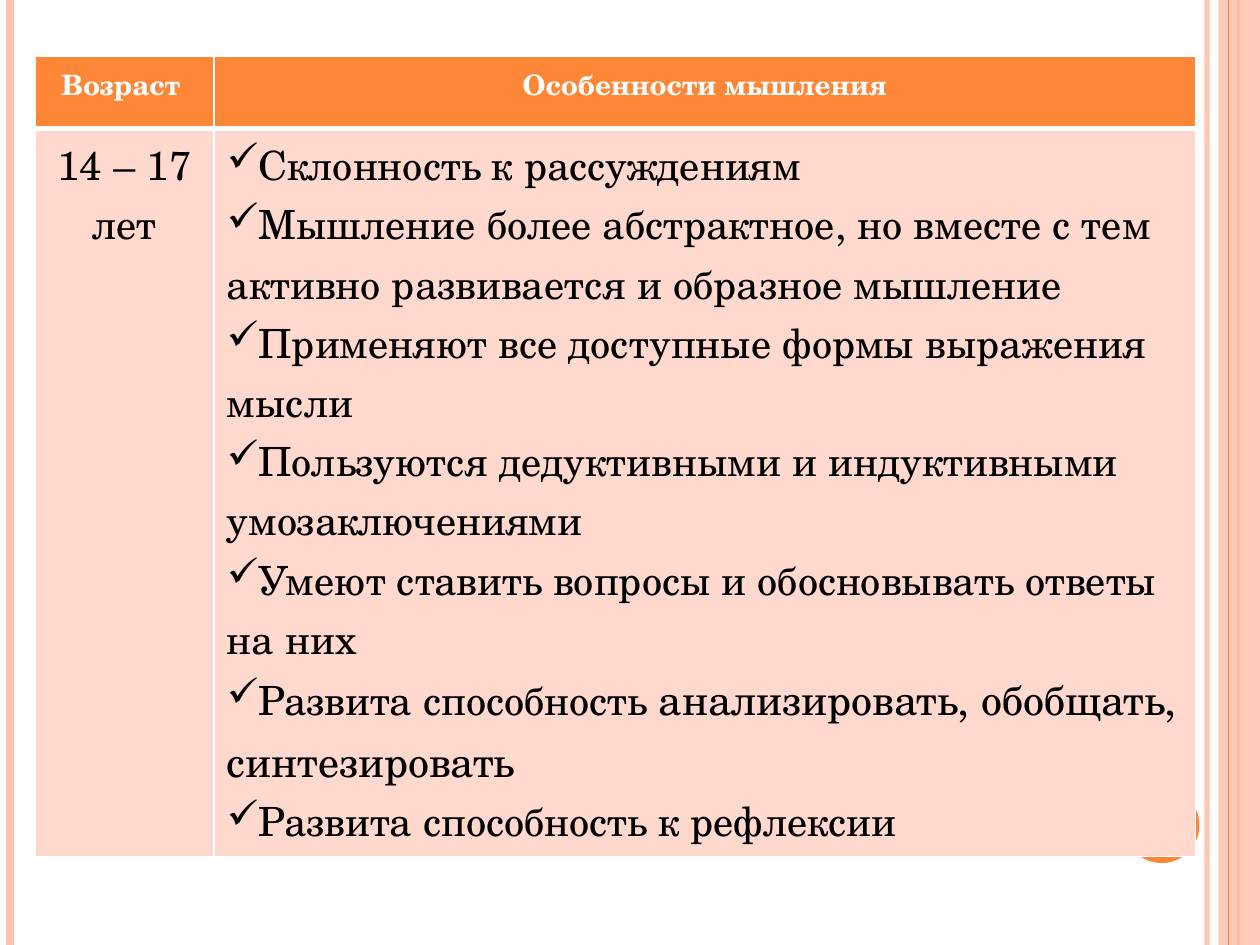
import dataclasses
import lxml.etree
import pptx
import pptx.dml.color
import pptx.enum.shapes
import pptx.enum.text
import pptx.oxml.ns
import pptx.util

Inches = pptx.util.Inches
Pt = pptx.util.Pt
qn = pptx.oxml.ns.qn


@dataclasses.dataclass(frozen=True)
class Theme:
    font: str = "TeX Gyre Schola"
    orange: str = "FE8637"
    peach: str = "FEC3AE"
    pale: str = "FFD9CE"
    white: str = "FFFFFF"
    black: str = "000000"
    head: int = 16
    body: int = 23
    large: int = 24


THEME = Theme()
HEADS = ["Возраст ", "Особенности мышления"]
AGE = "14 – 17 лет"
TRAITS = [
    ["Склонность к рассуждениям"],
    ["Мышление более абстрактное, но вместе с тем активно развивается и образное мышление"],
    ["Применяют все доступные формы выражения мысли"],
    ["Пользуются дедуктивными и индуктивными умозаключениями"],
    ["Умеют ставить вопросы и обосновывать ответы на них"],
    ["Развита способность ", "анализировать, обобщать, синтезировать"],
    ["Развита способность к рефлексии"],
]


def rgb(color):
    return pptx.dml.color.RGBColor.from_string(color)


def fade(fill, alpha):
    color = fill._xPr.find(".//" + qn("a:srgbClr"))
    lxml.etree.SubElement(color, qn("a:alpha"), val=str(alpha * 1000))


def add_bar(slide, x, color, width, alpha=100):
    kind = pptx.enum.shapes.MSO_CONNECTOR.STRAIGHT
    bar = slide.shapes.add_connector(kind, Inches(x), 0, Inches(x), Inches(7.5))
    bar.line.color.rgb = rgb(color)
    bar.line.width = Pt(width)
    if alpha < 100:
        fade(bar.line.fill, alpha)
    lxml.etree.SubElement(bar._element.spPr, qn("a:effectLst"))


def add_form(slide, kind, box, color, alpha=100):
    form = slide.shapes.add_shape(kind, *map(Inches, box))
    form.shadow.inherit = False
    form.fill.solid()
    form.fill.fore_color.rgb = rgb(color)
    form.line.fill.background()
    if alpha < 100:
        fade(form.fill, alpha)


def set_edges(cell, base):
    props = cell._tc.get_or_add_tcPr()
    widths = {"lnL": 1, "lnR": 1, "lnT": 1, "lnB": base}
    for spot, (tag, width) in enumerate(widths.items()):
        edge = lxml.etree.Element(qn("a:" + tag), w=str(Pt(width)))
        fill = lxml.etree.SubElement(edge, qn("a:solidFill"))
        lxml.etree.SubElement(fill, qn("a:srgbClr"), val=THEME.white)
        props.insert(spot, edge)


def style_run(run, size, color, bold=False):
    run.font.name = THEME.font
    run.font.size = Pt(size)
    run.font.color.rgb = rgb(color)
    run.font.bold = bold


def fill_cell(cell, color, base):
    cell.fill.solid()
    cell.fill.fore_color.rgb = rgb(color)
    set_edges(cell, base)


def set_label(cell, text, size, color, bold=False):
    cell.text_frame.text = text
    para = cell.text_frame.paragraphs[0]
    para.alignment = pptx.enum.text.PP_ALIGN.CENTER
    style_run(para.runs[0], size, color, bold)


def set_list(cell, items):
    frame = cell.text_frame
    frame.text = "\n".join(item[0] for item in items)
    for para, item in zip(frame.paragraphs, items):
        for part in item[1:]:
            para.add_run().text = part
        for run, size in zip(para.runs, (THEME.body, THEME.large)):
            style_run(run, size, THEME.black)
        props = para._p.get_or_add_pPr()
        props.set("marL", "0")
        props.set("indent", "0")
        lxml.etree.SubElement(props, qn("a:buChar"), char="✓")


def add_grid(slide):
    box = map(Inches, (0.28, 0.45, 9.21, 5.67))
    table = slide.shapes.add_table(2, 2, *box).table
    for column, width in zip(table.columns, (1.42, 7.79)):
        column.width = Inches(width)
    for row, height in zip(table.rows, (0.57, 5.1)):
        row.height = Inches(height)
    for spot, text in enumerate(HEADS):
        fill_cell(table.cell(0, spot), THEME.orange, 3)
        fill_cell(table.cell(1, spot), THEME.pale, 1)
        set_label(table.cell(0, spot), text, THEME.head, THEME.white, True)
    set_label(table.cell(1, 0), AGE, THEME.body, THEME.black)
    set_list(table.cell(1, 1), TRAITS)


def main():
    deck = pptx.Presentation()
    deck.slide_width, deck.slide_height = Inches(10), Inches(7.5)
    slide = deck.slides.add_slide(deck.slide_layouts[6])
    shape = pptx.enum.shapes.MSO_SHAPE
    add_bar(slide, 9.58, THEME.peach, 3, 93)
    add_bar(slide, 0.08, THEME.peach, 4.5)
    add_bar(slide, 9.83, THEME.orange, 1.5)
    add_form(slide, shape.RECTANGLE, (9.67, 0, 0.33, 7.5), THEME.peach, 87)
    add_bar(slide, 9.75, THEME.orange, 0.75)
    add_form(slide, shape.OVAL, (8.92, 6.25, 0.6, 0.6), THEME.orange)
    add_grid(slide)
    deck.save("out.pptx")


if __name__ == "__main__":
    main()
